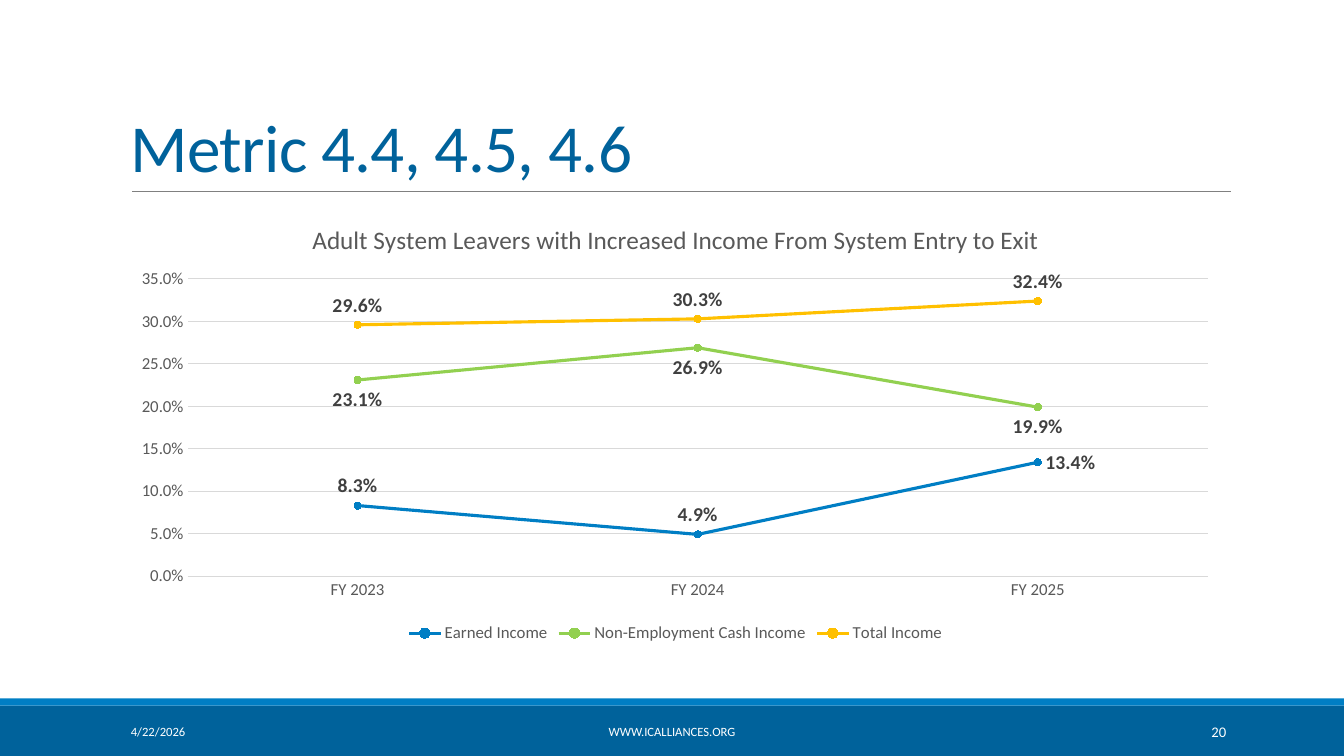
import pptx
import pptx.util
import pptx.chart.data
import pptx.dml.color
import pptx.enum.chart
import pptx.enum.shapes
import pptx.enum.text
import pptx.oxml
import pptx.oxml.ns

RGB = pptx.dml.color.RGBColor
NAVY = RGB(0x00, 0x62, 0x9B)
BLUE = RGB(0x00, 0x7E, 0xC4)
GREEN = RGB(0x92, 0xD0, 0x50)
GOLD = RGB(0xFF, 0xC0, 0x00)
WHITE = RGB(0xFF, 0xFF, 0xFF)
RULE = RGB(0x80, 0x80, 0x80)
GRID = RGB(0xD9, 0xD9, 0xD9)
GREY = RGB(0x59, 0x59, 0x59)
DARK = RGB(0x40, 0x40, 0x40)
FONT = "Calibri"

Inches, Pt = pptx.util.Inches, pptx.util.Pt
ALIGN, ANCHOR = pptx.enum.text.PP_ALIGN, pptx.enum.text.MSO_ANCHOR
SPOT = pptx.enum.chart.XL_LABEL_POSITION

WIDE, HIGH = 13.33, 7.5
LEFT, SPAN = 1.2, 11

YEARS = ["FY 2023", "FY 2024", "FY 2025"]
# name, values, colour, label spots that differ from "above"
SERIES = [
    ("Earned Income", (0.083, 0.049, 0.134), BLUE, {2: SPOT.RIGHT}),
    ("Non-Employment Cash Income", (0.231, 0.269, 0.199), GREEN,
     {i: SPOT.BELOW for i in range(3)}),
    ("Total Income", (0.296, 0.303, 0.324), GOLD, {}),
]


def style(font, size, color, bold=False):
    font.name, font.size, font.bold = FONT, Pt(size), bold
    font.color.rgb = color


def add_text(slide, box, text, size, color, align=ALIGN.LEFT,
             anchor=ANCHOR.MIDDLE):
    frame = slide.shapes.add_textbox(*map(Inches, box)).text_frame
    frame.word_wrap = True
    frame.vertical_anchor = anchor
    para = frame.paragraphs[0]
    para.alignment = align
    run = para.add_run()
    run.text = text
    style(run.font, size, color)
    return para, run


def add_bar(slide, box, color):
    bar = slide.shapes.add_shape(
        pptx.enum.shapes.MSO_SHAPE.RECTANGLE, *map(Inches, box))
    bar.shadow.inherit = False
    bar.fill.solid()
    bar.fill.fore_color.rgb = color
    bar.line.fill.background()


def add_head(slide, box):
    """Title standing on a thin rule."""
    x, y, w, h = box
    para, run = add_text(slide, box, "Metric 4.4, 4.5, 4.6", 48, NAVY,
                         anchor=ANCHOR.BOTTOM)
    para.line_spacing = 0.85
    run.font._element.set("spc", "-50")
    rule = slide.shapes.add_connector(
        pptx.enum.shapes.MSO_CONNECTOR.STRAIGHT,
        Inches(x + 0.11), Inches(y + h), Inches(x + w + 0.01), Inches(y + h))
    rule.line.color.rgb = RULE
    rule.line.width = Pt(0.5)
    rule._element.spPr.append(pptx.oxml.parse_xml(
        "<a:effectLst %s/>" % pptx.oxml.ns.nsdecls("a")))


def set_plot(chart, x, y, w, h):
    """Fix the inner plot area, in shares of the chart."""
    area = chart._chartSpace.chart.plotArea
    for old in area.findall(pptx.oxml.ns.qn("c:layout")):
        area.remove(old)
    sizes = "".join('<c:%s val="%s"/>' % pair
                    for pair in zip("xywh", (x, y, w, h)))
    area.insert(0, pptx.oxml.parse_xml(
        '<c:layout %s><c:manualLayout><c:layoutTarget val="inner"/>'
        '<c:xMode val="edge"/><c:yMode val="edge"/>%s'
        '</c:manualLayout></c:layout>'
        % (pptx.oxml.ns.nsdecls("c"), sizes.replace("c:x", "c:x"))))


def style_line(line, color, spots):
    line.smooth = False
    line.format.line.color.rgb = color
    line.format.line.width = Pt(2.25)
    mark = line.marker
    mark.style = pptx.enum.chart.XL_MARKER_STYLE.CIRCLE
    mark.size = 5
    mark.format.fill.solid()
    mark.format.fill.fore_color.rgb = color
    mark.format.line.color.rgb = color
    tags = line.data_labels
    tags.show_value = True
    tags.number_format = "0.0%"
    tags.number_format_is_linked = False
    tags.position = SPOT.ABOVE
    style(tags.font, 14, DARK, True)
    for i, spot in spots.items():
        tag = line.points[i].data_label
        style(tag.font, 14, DARK, True)
        tag.position = spot


def add_graph(slide, box):
    """Line chart with title, axes and legend."""
    data = pptx.chart.data.CategoryChartData(number_format="0.0%")
    data.categories = YEARS
    for name, vals, _, _ in SERIES:
        data.add_series(name, vals)
    chart = slide.shapes.add_chart(
        pptx.enum.chart.XL_CHART_TYPE.LINE_MARKERS,
        *map(Inches, box), data).chart
    style(chart.font, 12, GREY)
    chart.has_title = True
    run = chart.chart_title.text_frame.paragraphs[0].add_run()
    run.text = ("Adult System Leavers with Increased Income "
                "From System Entry to Exit")
    style(run.font, 18, GREY)
    chart.has_legend = True
    chart.legend.position = pptx.enum.chart.XL_LEGEND_POSITION.BOTTOM
    chart.legend.include_in_layout = False
    style(chart.legend.font, 12, GREY)

    # Axes
    cat, val = chart.category_axis, chart.value_axis
    for axis in (cat, val):
        axis.major_tick_mark = pptx.enum.chart.XL_TICK_MARK.NONE
        axis.minor_tick_mark = pptx.enum.chart.XL_TICK_MARK.NONE
        style(axis.tick_labels.font, 12, GREY)
    val.minimum_scale, val.maximum_scale, val.major_unit = 0, 0.35, 0.05
    val.tick_labels.number_format = "0.0%"
    val.tick_labels.number_format_is_linked = False
    val.format.line.fill.background()
    for line in (cat.format.line, val.major_gridlines.format.line):
        line.color.rgb = GRID
        line.width = Pt(0.75)

    # Series
    plot = chart.plots[0]
    plot.vary_by_categories = False
    for line, (_, _, color, spots) in zip(plot.series, SERIES):
        style_line(line, color, spots)
    set_plot(chart, 0.06, 0.17, 0.92, 0.67)


def add_foot(slide, box):
    """Two-tone band with date, address and page number."""
    x, y, w, h = box
    add_bar(slide, box, NAVY)
    add_bar(slide, (x, y - 0.07, w, 0.07), BLUE)
    for left, width, text, size, align in (
            (LEFT, 2.7, "4/22/2026", 9, ALIGN.LEFT),
            (4.03, 5.27, "WWW.ICALLIANCES.ORG", 9, ALIGN.CENTER),
            (10.83, 1.43, "20", 10.5, ALIGN.RIGHT)):
        add_text(slide, (x + left, y + 0.06, width, 0.4), text, size,
                 WHITE, align)


def main():
    deck = pptx.Presentation()
    deck.slide_width, deck.slide_height = Inches(WIDE), Inches(HIGH)
    slide = deck.slides.add_slide(deck.slide_layouts[6])
    add_foot(slide, (0, HIGH - 0.5, WIDE, 0.5))
    add_head(slide, (LEFT, 0.31, SPAN, 1.59))
    add_graph(slide, (LEFT, 2.02, SPAN, 4.4))
    deck.save("out.pptx")


if __name__ == "__main__":
    main()
